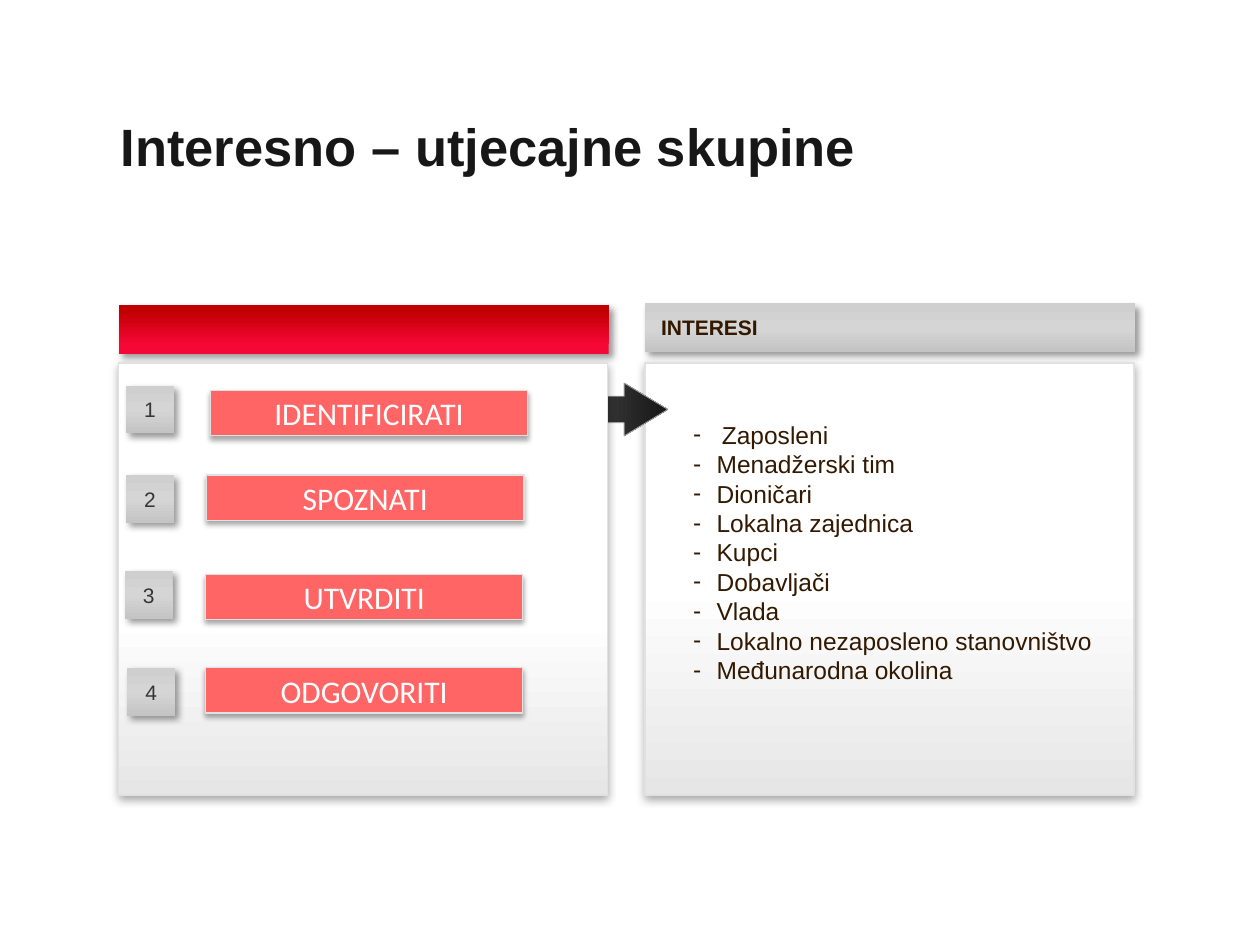
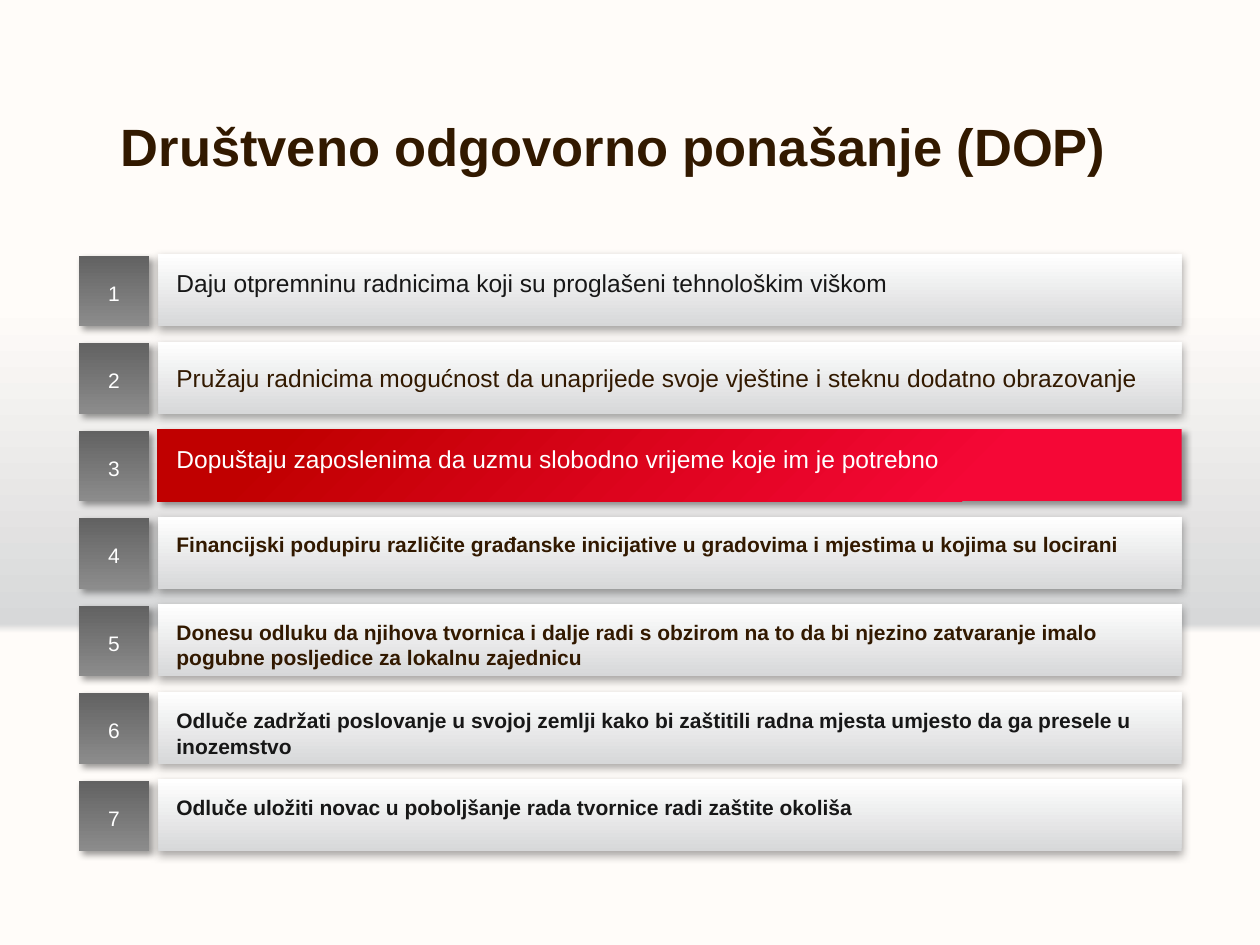
from dataclasses import dataclass

from lxml.etree import SubElement
from pptx import Presentation
from pptx.dml.color import RGBColor
from pptx.enum.shapes import MSO_SHAPE as SHAPE
from pptx.enum.text import MSO_ANCHOR as ANCHOR, MSO_AUTO_SIZE as AUTO, PP_ALIGN as ALIGN
from pptx.oxml.ns import qn
from pptx.util import Pt

COLORS = {
    "white": "FFFFFF", "ink": "171717", "brown": "321900", "digit": "353637",
    "edge": "E1E1E1", "arrow_edge": "A0A2A4", "coral": "FF6565", "black": "000000",
    "red": "F50736", "dark_red": "C00000", "mist": "D7D8D9", "cream": "FFFCF9",
    "panel": "E6E6E6", "silver_top": "CFCFCF", "silver": "D5D5D5", "silver_low": "C4C4C4",
    "slate": "626262", "slate_low": "8C8C8C", "charcoal": "3A3A3A",
}


@dataclass(frozen=True)
class Gradient:
    angle: int
    stops: tuple  # (percent, colour) or (percent, colour, opacity)


@dataclass(frozen=True)
class Shadow:
    opacity: int
    blur: float
    distance: float
    angle: int


@dataclass(frozen=True)
class Box:
    left: float
    top: float
    width: float
    height: float


@dataclass(frozen=True)
class Step:
    label: str
    badge: tuple
    bar: tuple


@dataclass(frozen=True)
class Practice:
    text: str
    color: str = "ink"
    size: int = 12
    bold: bool = True
    inset: float = 8.6
    highlight: bool = False


SILVER = Gradient(90, ((0, "silver_top"), (50, "silver"), (100, "silver_low")))
SLATE = Gradient(90, ((0, "slate"), (100, "slate_low")))
MIST = Gradient(270, ((0, "mist"), (100, "white")))
CHARCOAL = Gradient(0, ((0, "charcoal"), (100, "ink")))
BACKDROP = Gradient(270, ((33, "cream"), (34, "mist", 49), (68, "cream")))
DIAGONAL = Shadow(40, 4, 3, 45)
SOFT = Shadow(35, 5, 1.8, 90)
TIGHT = Shadow(35, 3.1, 1.8, 90)

STEPS = (
    Step("IDENTIFICIRATI", (72, 220.3), (120.2, 223.2)),
    Step("SPOZNATI", (72, 271.4), (118, 271.4)),
    Step("UTVRDITI", (71.3, 326.2), (117.4, 328.3)),
    Step("ODGOVORITI", (72.7, 381.6), (117.4, 381.6)),
)
INTERESTS = ("Zaposleni", "Menadžerski tim", "Dioničari", "Lokalna zajednica", "Kupci",
             "Dobavljači", "Vlada", "Lokalno nezaposleno stanovništvo", "Međunarodna okolina")
PRACTICES = (
    Practice("Daju otpremninu radnicima koji su proglašeni tehnološkim viškom",
             size=14, bold=False, inset=7.9),
    Practice("Pružaju radnicima mogućnost da unaprijede svoje vještine i steknu dodatno "
             "obrazovanje", "brown", 14, False, 12.2),
    Practice("Dopuštaju zaposlenima da uzmu slobodno vrijeme koje im je potrebno",
             "white", 14, False, highlight=True),
    Practice("Financijski podupiru različite građanske inicijative u gradovima i mjestima "
             "u kojima su locirani", "brown"),
    Practice("Donesu odluku da njihova tvornica i dalje radi s obzirom na to da bi njezino "
             "zatvaranje imalo pogubne posljedice za lokalnu zajednicu", "brown"),
    Practice("Odluče zadržati poslovanje u svojoj zemlji kako bi zaštitili radna mjesta "
             "umjesto da ga presele u inozemstvo", inset=9.2),
    Practice("Odluče uložiti novac u poboljšanje rada tvornice radi zaštite okoliša"),
)


def rgb(name: str) -> RGBColor:
    return RGBColor.from_string(COLORS[name])


def red_gradient(angle: int) -> Gradient:
    return Gradient(angle, ((11, "red"), (20, "red"), (89, "dark_red")))


def panel_gradient(middle: int) -> Gradient:
    return Gradient(270, ((0, "panel"), (middle, "white"), (100, "white")))


def add_color(parent, name: str, opacity: int = 100) -> None:
    clr = SubElement(parent, qn("a:srgbClr"), val=COLORS[name])
    if opacity < 100:
        SubElement(clr, qn("a:alpha"), val=str(opacity * 1000))


def paint(owner, element, gradient: Gradient) -> None:
    """Fill a shape or a background with any number of gradient stops."""
    owner.fill.gradient()
    grad = element.find(".//" + qn("a:gradFill"))
    stops = grad.find(qn("a:gsLst"))
    for old in list(stops):
        stops.remove(old)
    for percent, *color in gradient.stops:
        add_color(SubElement(stops, qn("a:gs"), pos=str(percent * 1000)), *color)
    grad.find(qn("a:lin")).set("ang", str(gradient.angle * 60000))


def cast(sp, shadow: Shadow) -> None:
    effects = sp._element.spPr.find(qn("a:effectLst"))
    outer = SubElement(effects, qn("a:outerShdw"), blurRad=str(Pt(shadow.blur)),
                       dist=str(Pt(shadow.distance)), dir=str(shadow.angle * 60000),
                       algn="ctr", rotWithShape="0")
    add_color(outer, "black", shadow.opacity)


def place(sp, box: Box) -> None:
    sp.left, sp.top = Pt(box.left), Pt(box.top)
    sp.width, sp.height = Pt(box.width), Pt(box.height)


def write(sp, *lines: str, size: float, color: str, font: str = "Arial", bold: bool = False,
          align=ALIGN.LEFT, anchor=ANCHOR.MIDDLE, spacing: float = 1.0,
          insets: tuple = (0, 3.6, 0, 3.6)) -> None:
    tf = sp.text_frame
    tf.word_wrap, tf.auto_size, tf.vertical_anchor = True, AUTO.NONE, anchor
    tf.margin_left, tf.margin_top, tf.margin_right, tf.margin_bottom = map(Pt, insets)
    for i, line in enumerate(lines):
        p = tf.add_paragraph() if i else tf.paragraphs[0]
        p.alignment, p.line_spacing, p.space_before = align, spacing, Pt(0)
        r = p.add_run()
        r.text = line
        r.font.name, r.font.size, r.font.bold = font, Pt(size), bold
        r.font.color.rgb = rgb(color)


def add_block(s, box: Box, fill, shadow: Shadow | None = None, edge: str | None = None,
              edge_width: float = 0.75, kind=SHAPE.RECTANGLE):
    sp = s.shapes.add_shape(kind, Pt(box.left), Pt(box.top), Pt(box.width), Pt(box.height))
    sp.shadow.inherit = False
    if isinstance(fill, Gradient):
        paint(sp, sp._element, fill)
    else:
        sp.fill.solid()
        sp.fill.fore_color.rgb = rgb(fill)
    if edge:
        sp.line.color.rgb, sp.line.width = rgb(edge), Pt(edge_width)
    else:
        sp.line.fill.background()
    if shadow:
        cast(sp, shadow)
    return sp


def add_title(s, text: str, width: float, color: str) -> None:
    place(s.shapes.title, Box(69, 61.2, width, 47.5))
    write(s.shapes.title, text, size=30, color=color, bold=True, spacing=0.95)


def add_dash(p, indent: float) -> None:
    pPr = p._p.get_or_add_pPr()
    pPr.set("marL", str(Pt(indent)))
    pPr.set("indent", str(-Pt(indent)))
    SubElement(pPr, qn("a:buChar"), char="-")


def add_interests(s) -> None:
    body = s.placeholders[1]
    s.shapes._spTree.append(body._element)  # in front of its panel
    place(body, Box(388.8, 236.2, 257, 177.1))
    write(body, *INTERESTS, size=14, color="brown", align=ALIGN.JUSTIFY, anchor=ANCHOR.TOP,
          insets=(7.2, 3.6, 7.2, 3.6))
    for i, p in enumerate(body.text_frame.paragraphs):
        add_dash(p, 13.5 if i else 16.5)


def build_groups_slide(prs) -> None:
    s = prs.slides.add_slide(prs.slide_layouts[1])
    add_title(s, "Interesno – utjecajne skupine", 454.3, "ink")
    left, right = 67.8, 368.6
    header = add_block(s, Box(right, 173.4, 280, 28), SILVER, DIAGONAL)
    write(header, "INTERESI", size=12, color="brown", bold=True, spacing=0.95,
          insets=(9.2, 3.6, 0, 3.6))
    add_block(s, Box(right, 207.4, 279.4, 247), panel_gradient(49), SOFT, "edge")
    add_interests(s)
    arrow = add_block(s, Box(339.8, 218.9, 41.8, 30.2), CHARCOAL, edge="arrow_edge",
                      edge_width=0.5, kind=SHAPE.RIGHT_ARROW)
    arrow.adjustments[0], arrow.adjustments[1] = 0.5, 0.825
    add_block(s, Box(left, 174.3, 280, 28), red_gradient(270), DIAGONAL)
    add_block(s, Box(left, 207.4, 279.4, 247), panel_gradient(41), SOFT, "edge")
    for number, step in enumerate(STEPS, 1):
        badge = add_block(s, Box(*step.badge, 27.4, 27.4), SILVER, DIAGONAL)
        write(badge, str(number), size=12, color="digit", align=ALIGN.CENTER)
        bar = add_block(s, Box(*step.bar, 181.4, 25.9), "coral", TIGHT, "edge")
        write(bar, step.label, size=18, color="white", font="Calibri", align=ALIGN.CENTER)


def build_practices_slide(prs) -> None:
    s = prs.slides.add_slide(prs.slide_layouts[5])
    paint(s.background, s._element, BACKDROP)
    add_title(s, "Društveno odgovorno ponašanje (DOP)", 594, "brown")
    pitch = 50
    for i, row in enumerate(PRACTICES):
        fill, shadow = (red_gradient(225), DIAGONAL) if row.highlight else (MIST, SOFT)
        bar = add_block(s, Box(90, 145.3 + i * pitch, 585.2, 41.2), fill, shadow)
        write(bar, row.text, size=row.size, color=row.color, bold=row.bold,
              anchor=ANCHOR.TOP, insets=(10.8, row.inset, 14, 0))
        badge = add_block(s, Box(45, 146.2 + i * pitch, 40.3, 40.3), SLATE, DIAGONAL)
        write(badge, str(i + 1), size=12, color="white", align=ALIGN.CENTER,
              insets=(0, 5.6, 0, 3.6))


def main() -> None:
    prs = Presentation()
    prs.slide_width, prs.slide_height = Pt(720), Pt(540)
    build_groups_slide(prs)
    build_practices_slide(prs)
    prs.save("out.pptx")


if __name__ == "__main__":
    main()
